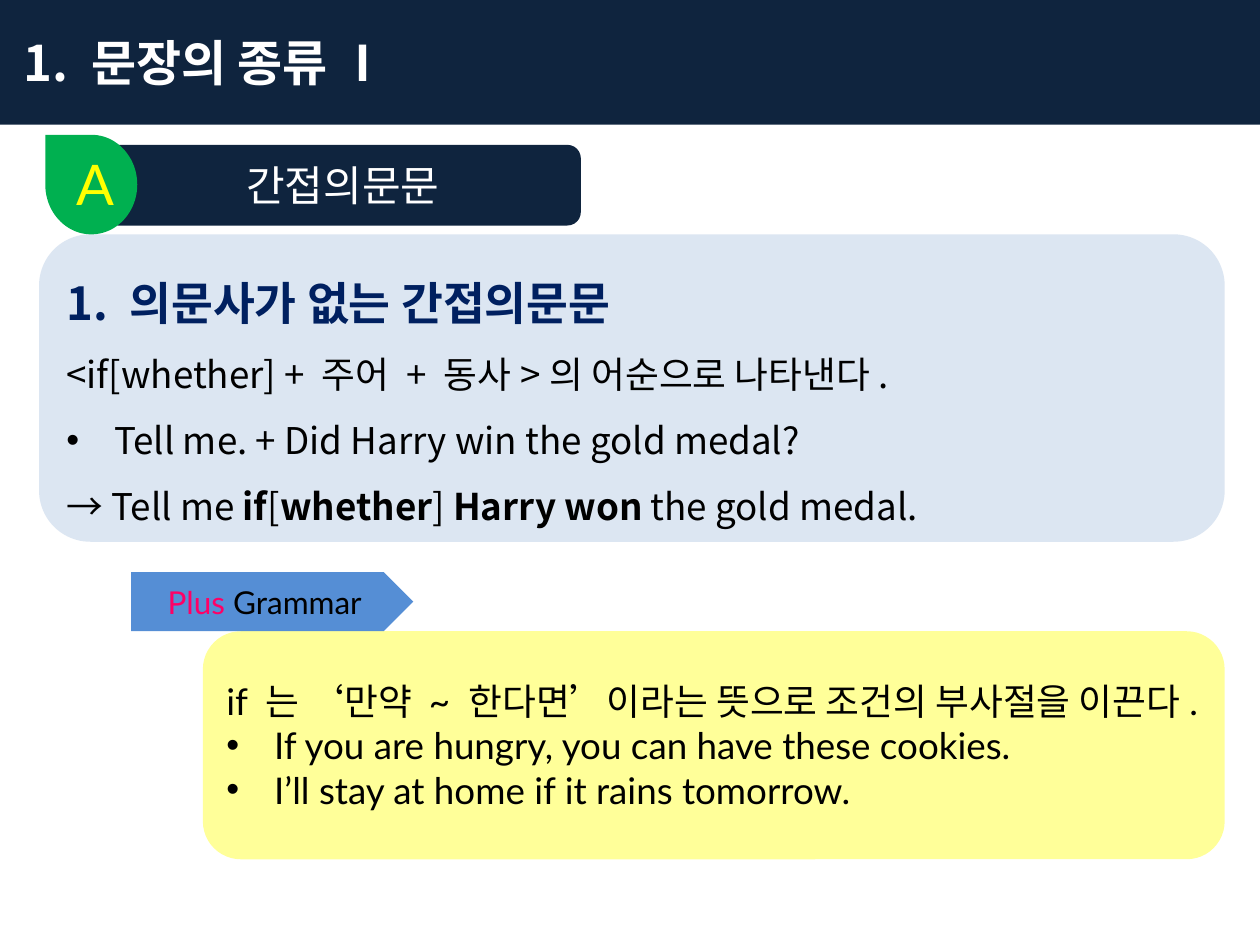
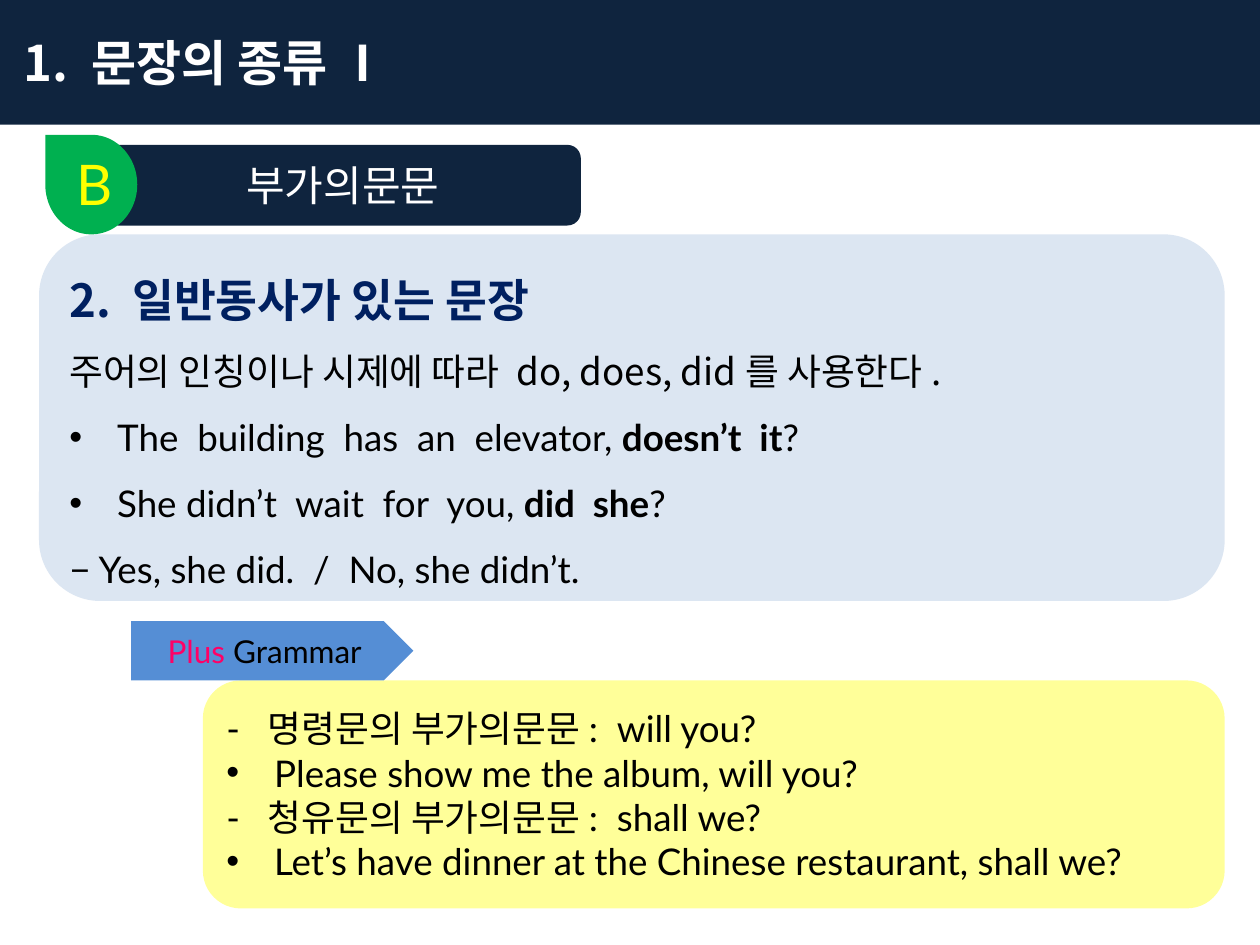
from lxml.etree import SubElement
from pptx import Presentation
from pptx.dml.color import RGBColor
from pptx.enum.shapes import MSO_SHAPE
from pptx.enum.text import MSO_ANCHOR, MSO_AUTO_SIZE, PP_ALIGN
from pptx.oxml.ns import qn
from pptx.util import Inches, Pt

KOREAN, LATIN = "Noto Sans CJK KR", "Lato"
NAVY, PALE_BLUE, BLUE = "0F243E", "DCE6F2", "558ED5"
GREEN, PALE_YELLOW = "00B050", "FFFF99"
BULLET_INDENT = Inches(0.38)

TITLE = {"size": Pt(28), "name": KOREAN, "color": "FFFFFF", "bold": True}
TOPIC = {"size": Pt(24), "name": KOREAN, "color": "FFFFFF"}
LETTER = {"size": Pt(32), "name": LATIN, "color": "FFFF00"}
HEADING = {"size": Pt(26), "name": KOREAN, "color": "002060", "bold": True}
KOREAN_BODY = {"size": Pt(21), "name": KOREAN, "color": "000000"}
LATIN_BODY = {**KOREAN_BODY, "name": LATIN}
PLUS = {"size": Pt(18), "name": LATIN, "color": "FF0066"}

LESSONS = [
    {
        "letter": "A",
        "topic": "간접의문문",
        "rule_height": 2.44,
        "rules": [
            ("1. 의문사가 없는 간접의문문", HEADING),
            ("<if[whether] + 주어 + 동사>의 어순으로 나타낸다.", KOREAN_BODY),
            ("• Tell me. + Did Harry win the gold medal?", KOREAN_BODY),
            ("→ Tell me |if|[|whether|] |Harry won| the gold medal.", KOREAN_BODY),
        ],
        "plus_top": 4.54,
        "plus": [
            "if 는 ‘만약 ~ 한다면’이라는 뜻으로 조건의 부사절을 이끈다.",
            "• If you are hungry, you can have these cookies.",
            "• I’ll stay at home if it rains tomorrow.",
        ],
    },
    {
        "letter": "B",
        "topic": "부가의문문",
        "rule_height": 2.91,
        "rules": [
            ("2. 일반동사가 있는 문장", HEADING),
            ("주어의 인칭이나 시제에 따라 do, does, did를 사용한다.", KOREAN_BODY),
            ("• The  building  has  an  elevator, |doesn’t  it|?", LATIN_BODY),
            ("• She didn’t  wait  for  you, |did  she|?", LATIN_BODY),
            ("− Yes, she did.  /  No, she didn’t.", LATIN_BODY),
        ],
        "plus_top": 4.93,
        "plus": [
            "-  명령문의 부가의문문:  will you?",
            "• Please show me the album, will you?",
            "-  청유문의 부가의문문:  shall we?",
            "• Let’s have dinner at the Chinese restaurant, shall we?",
        ],
    },
]


def rgb(hex_string):
    return RGBColor.from_string(hex_string)


def write(shape, lines, alignment=PP_ALIGN.LEFT, spacing=1.0, accent=None):
    """Fill a shape with (text, format) lines; every second part between bars takes the accent."""
    frame = shape.text_frame
    frame.word_wrap = True
    frame.auto_size = MSO_AUTO_SIZE.NONE
    for index, (text, style) in enumerate(lines):
        paragraph = frame.add_paragraph() if index else frame.paragraphs[0]
        paragraph.alignment = alignment
        paragraph.line_spacing = spacing
        if text.startswith("• "):
            text = text[2:]
            properties = paragraph._p.get_or_add_pPr()
            properties.set("marL", str(BULLET_INDENT))
            properties.set("indent", str(-BULLET_INDENT))
            SubElement(properties, qn("a:buFont"), typeface="Arial")
            SubElement(properties, qn("a:buChar"), char="•")
        for part_index, part in enumerate(text.split("|")):
            run = paragraph.add_run()
            run.text = part
            part_style = {**style, **(accent or {})} if part_index % 2 else style
            for name, value in part_style.items():
                if name == "color":
                    run.font.color.rgb = rgb(value)
                else:
                    setattr(run.font, name, value)
            SubElement(run._r.get_or_add_rPr(), qn("a:ea"), typeface=KOREAN)


presentation = Presentation()
presentation.slide_width = Inches(10)
presentation.slide_height = Inches(7.5)

for lesson in LESSONS:
    slide = presentation.slides.add_slide(presentation.slide_layouts[5])

    title = slide.shapes.title
    title.left, title.top = Inches(0), Inches(0)
    title.width, title.height = Inches(10), Inches(0.99)
    title.fill.solid()
    title.fill.fore_color.rgb = rgb(NAVY)
    title.text_frame.vertical_anchor = MSO_ANCHOR.MIDDLE
    title.text_frame.margin_left = Inches(0.19)
    write(title, [("1. 문장의 종류 Ⅰ", TITLE)])

    plus_top = lesson["plus_top"]
    rounded = MSO_SHAPE.FLOWCHART_ALTERNATE_PROCESS
    blocks = {}
    for block, kind, box, fill in [
        ("rules", rounded, (0.31, 1.86, 9.41, lesson["rule_height"]), PALE_BLUE),
        ("topic", rounded, (0.83, 1.15, 3.78, 0.64), NAVY),
        ("drop", MSO_SHAPE.TEAR, (0.33, 1.1, 0.79, 0.73), GREEN),
        ("plus", rounded, (1.61, plus_top + 0.47, 8.11, 1.81), PALE_YELLOW),
        ("plus label", MSO_SHAPE.PENTAGON, (1.04, plus_top, 2.24, 0.47), BLUE),
    ]:
        shape = slide.shapes.add_shape(kind, *map(Inches, box))
        shape.shadow.inherit = False
        shape.fill.solid()
        shape.fill.fore_color.rgb = rgb(fill)
        shape.line.fill.background()
        shape.text_frame.vertical_anchor = MSO_ANCHOR.MIDDLE
        blocks[block] = shape

    blocks["drop"].rotation = 270
    letter = slide.shapes.add_textbox(Inches(0.51), Inches(1.14), Inches(0.47), Inches(0.64))
    write(letter, [(lesson["letter"], LETTER)])
    write(blocks["topic"], [(lesson["topic"], TOPIC)], PP_ALIGN.CENTER)
    write(blocks["rules"], lesson["rules"], PP_ALIGN.JUSTIFY, 1.5, {"bold": True})
    write(blocks["plus"], [(text, LATIN_BODY) for text in lesson["plus"]])
    write(blocks["plus label"], [("Plus |Grammar", PLUS)], PP_ALIGN.CENTER,
          accent={"color": "000000"})

presentation.save("out.pptx")
